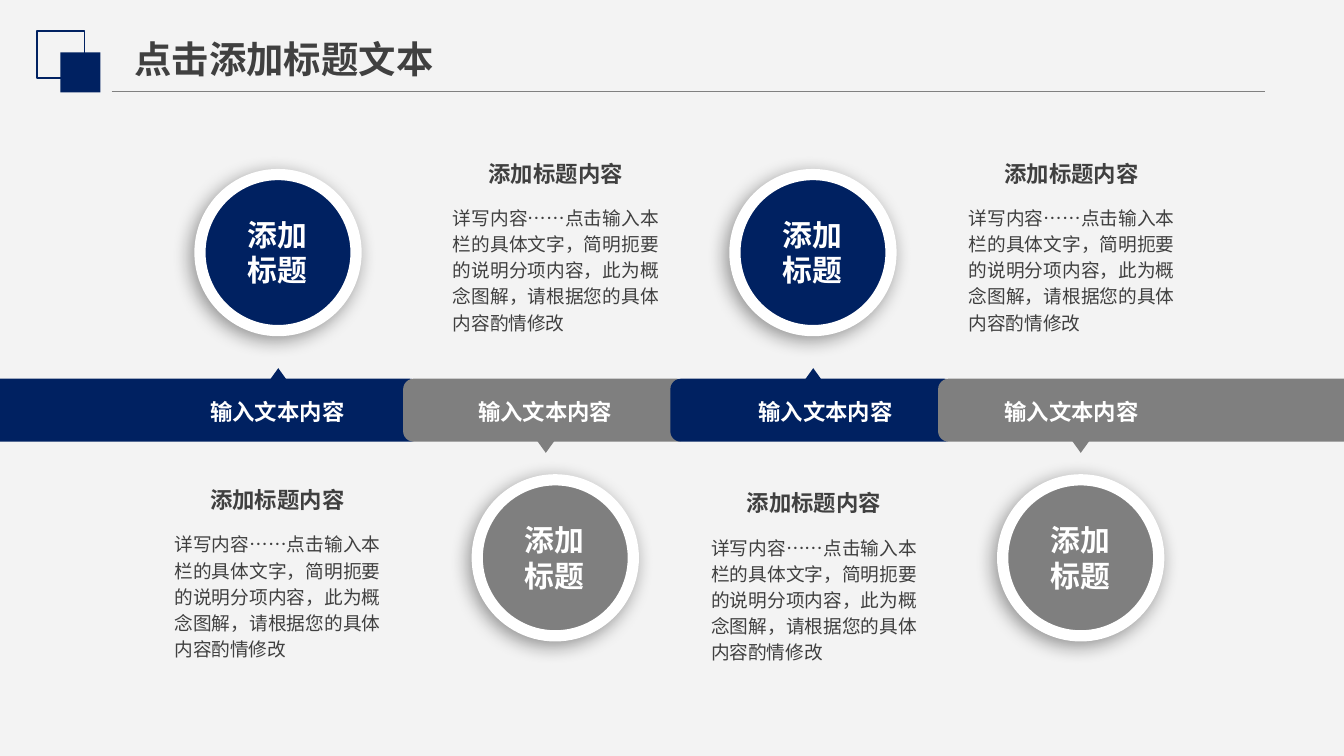
from dataclasses import dataclass

from lxml import etree
from pptx import Presentation
from pptx.dml.color import RGBColor
from pptx.enum.shapes import MSO_CONNECTOR, MSO_SHAPE
from pptx.enum.text import MSO_AUTO_SIZE, PP_ALIGN
from pptx.oxml.ns import qn
from pptx.util import Cm, Pt

RECTANGLE = MSO_SHAPE.RECTANGLE
ROUNDED = MSO_SHAPE.ROUNDED_RECTANGLE
TRIANGLE = MSO_SHAPE.ISOSCELES_TRIANGLE
OVAL = MSO_SHAPE.OVAL
STRAIGHT = MSO_CONNECTOR.STRAIGHT
LEFT, CENTER, JUSTIFY = PP_ALIGN.LEFT, PP_ALIGN.CENTER, PP_ALIGN.JUSTIFY
FIT_SHAPE = MSO_AUTO_SIZE.SHAPE_TO_FIT_TEXT


@dataclass(frozen=True)
class Theme:
    font: str = "Noto Sans CJK SC"
    background: str = "F3F3F3"
    navy: str = "002161"
    gray: str = "7F7F7F"
    rule: str = "808080"
    ink: str = "404040"
    white: str = "FFFFFF"
    title_size: float = 20
    circle_size: float = 16
    heading_size: float = 12
    body_size: float = 10
    body_leading: float = 14


@dataclass(frozen=True)
class Stage:
    """One section of the band; positions in centimetres."""
    bar_left: float
    bar_width: float
    label_left: float
    circle_left: float
    heading_left: float
    heading_top: float
    circle_above: bool


THEME = Theme()
BODY = "详写内容……点击输入本栏的具体文字，简明扼要的说明分项内容，此为概念图解，请根据您的具体内容酌情修改"
STAGES = [
    Stage(-0.3, 8.25, 3.58, 3.78, 3.58, 9.19, True),
    Stage(7.62, 5.38, 8.64, 9.02, 8.84, 3.02, False),
    Stage(12.67, 5.38, 13.94, 13.89, 13.72, 9.25, True),
    Stage(17.73, 7.98, 18.59, 18.95, 18.59, 3.02, False),
]
POINTER_LEFT, POINTER_PITCH = 5.08, 5.055
BAR_TOP, BAR_HEIGHT = 7.16, 1.19


def add_box(page, kind, left: float, top: float, width: float, height: float,
            fill: str | None = None, line: str | None = None, line_width: float = 1):
    box = page.shapes.add_shape(kind, Cm(left), Cm(top), Cm(width), Cm(height))
    box.shadow.inherit = False
    if fill:
        box.fill.solid()
        box.fill.fore_color.rgb = RGBColor.from_string(fill)
    else:
        box.fill.background()
    if line:
        box.line.color.rgb = RGBColor.from_string(line)
        box.line.width = Pt(line_width)
    else:
        box.line.fill.background()
    return box


def add_text(page, text: str, left: float, top: float, width: float, height: float, *,
             size: float, color: str = THEME.ink, bold: bool = True, align=CENTER,
             leading: float | None = None, wrap: bool = True, inset: bool = False):
    box = page.shapes.add_textbox(Cm(left), Cm(top), Cm(width), Cm(height))
    frame = box.text_frame
    frame.word_wrap = wrap
    frame.auto_size = FIT_SHAPE
    if not inset:
        frame.margin_left = frame.margin_right = Cm(0)
        frame.margin_top = frame.margin_bottom = Cm(0)
    para = frame.paragraphs[0]
    para.alignment = align
    if leading:
        para.line_spacing = Pt(leading)
    span = para.add_run()
    span.text = text
    span.font.name = THEME.font
    span.font.size = Pt(size)
    span.font.bold = bold
    span.font.color.rgb = RGBColor.from_string(color)
    # Chinese glyphs take the East Asian typeface
    etree.SubElement(span.font._element, qn("a:ea"), typeface=THEME.font)


def add_soft_shadow(box) -> None:
    effects = box._element.spPr.find(qn("a:effectLst"))
    shadow = etree.SubElement(effects, qn("a:outerShdw"), blurRad=str(Pt(10)),
                              dist=str(Pt(3)), dir=str(135 * 60000),
                              algn="tr", rotWithShape="0")
    color = etree.SubElement(shadow, qn("a:srgbClr"), val="000000")
    etree.SubElement(color, qn("a:alpha"), val="40000")


def add_header(page) -> None:
    rule = page.shapes.add_connector(STRAIGHT, Cm(2.11), Cm(1.73), Cm(23.9), Cm(1.73))
    rule.line.color.rgb = RGBColor.from_string(THEME.rule)
    rule.line.width = Pt(0.75)
    etree.SubElement(rule._element.spPr, qn("a:effectLst"))
    add_box(page, RECTANGLE, 0.7, 0.58, 0.9, 0.9, line=THEME.navy)
    add_box(page, RECTANGLE, 1.14, 0.99, 0.76, 0.76, fill=THEME.navy)
    add_text(page, "点击添加标题文本", 2.29, 0.56, 6.22, 1.12, size=THEME.title_size,
             align=LEFT, wrap=False, inset=True)


def add_stage(page, index: int, stage: Stage) -> None:
    above = stage.circle_above
    color = THEME.navy if above else THEME.gray

    # Band section with its pointer
    bar = add_box(page, ROUNDED, stage.bar_left, BAR_TOP, stage.bar_width, BAR_HEIGHT, color)
    bar.adjustments[0] = 0.167
    pointer = add_box(page, TRIANGLE, POINTER_LEFT + index * POINTER_PITCH,
                      6.96 if above else 8.31, 0.36, 0.25, color)
    pointer.rotation = 0 if above else 180
    add_text(page, "输入文本内容", stage.label_left, 7.52, 3.33, 0.51,
             size=THEME.heading_size, color=THEME.white)

    # Ringed circle
    circle_top = 3.3 if above else 9.07
    circle = add_box(page, OVAL, stage.circle_left, circle_top, 2.95, 2.95, color,
                     THEME.white, 6)
    add_soft_shadow(circle)
    add_text(page, "添加标题", stage.circle_left + 0.69, circle_top + 0.79, 1.55, 1.37,
             size=THEME.circle_size, color=THEME.white)

    # Description on the other side of the band
    add_text(page, "添加标题内容", stage.heading_left, stage.heading_top, 3.33, 0.51,
             size=THEME.heading_size)
    add_text(page, BODY, stage.heading_left - 0.28, stage.heading_top + 0.82, 3.89, 2.49,
             size=THEME.body_size, bold=False, align=JUSTIFY, leading=THEME.body_leading)


def main() -> None:
    deck = Presentation()
    deck.slide_width, deck.slide_height = Cm(25.4), Cm(14.29)
    page = deck.slides.add_slide(deck.slide_layouts[6])
    page.background.fill.solid()
    page.background.fill.fore_color.rgb = RGBColor.from_string(THEME.background)
    add_header(page)
    for index, stage in enumerate(STAGES):
        add_stage(page, index, stage)
    deck.save("out.pptx")


if __name__ == "__main__":
    main()
